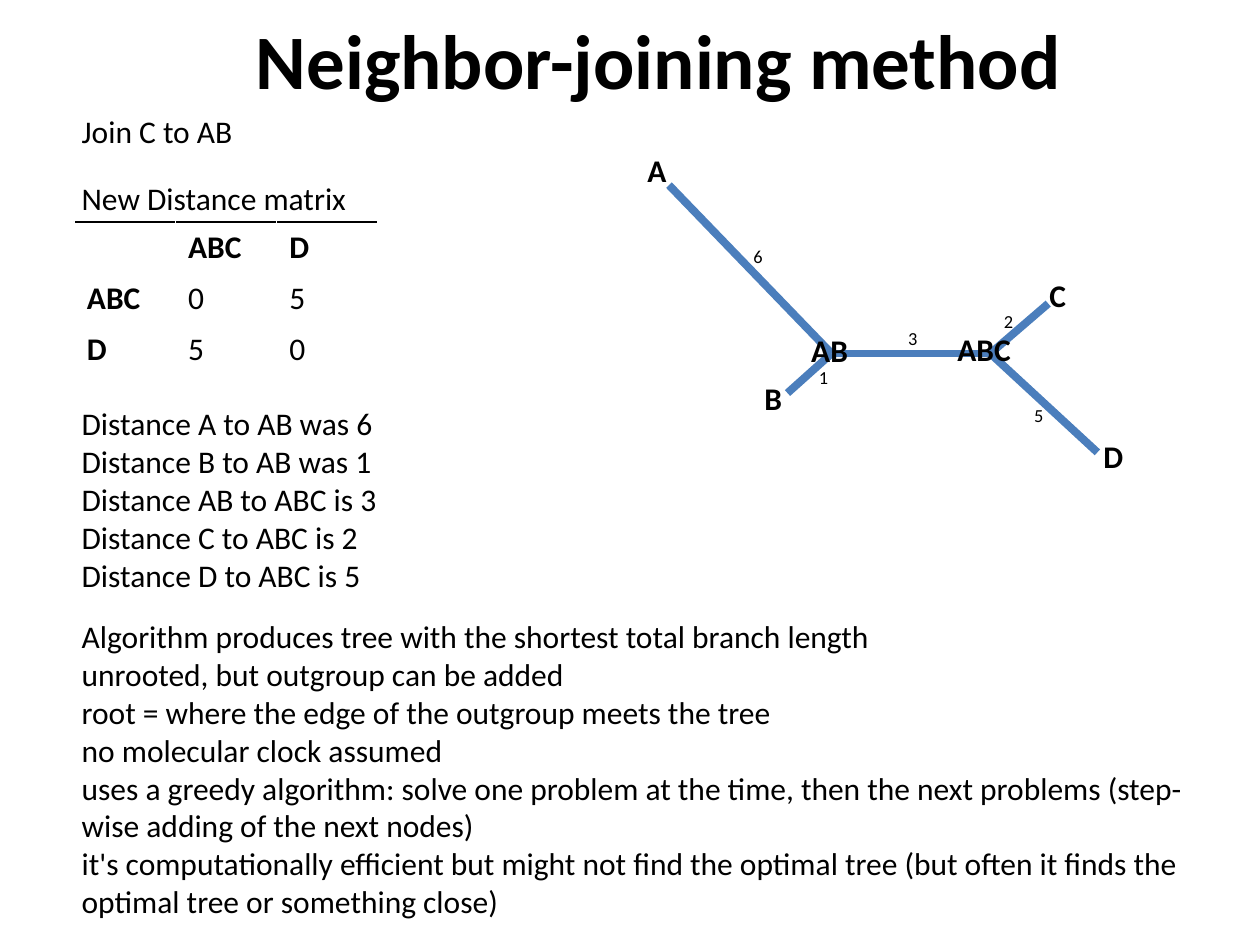
"""Build the neighbor-joining slide with its distance matrix and tree."""
from dataclasses import dataclass

from lxml.etree import SubElement
from pptx import Presentation
from pptx.dml.color import RGBColor
from pptx.enum.shapes import MSO_CONNECTOR as Connector
from pptx.enum.text import MSO_ANCHOR as Anchor, MSO_AUTO_SIZE as AutoSize, PP_ALIGN as Align
from pptx.oxml.ns import qn
from pptx.slide import Slide
from pptx.table import _Cell as Cell
from pptx.text.text import TextFrame
from pptx.util import Pt


@dataclass(frozen=True)
class Theme:
    font: str = "Calibri"
    ink: str = "000000"
    branch: str = "4B7EBC"
    title_size: float = 44
    body_size: float = 18
    length_size: float = 10.5
    branch_width: float = 4.5
    rule_width: float = 1.5


@dataclass(frozen=True)
class Label:
    text: str
    left: float
    top: float
    width: float
    height: float = 29
    size: float = 18
    bold: bool = False
    wrap: bool = False


@dataclass(frozen=True)
class Branch:
    start: str
    end: str
    length: int
    label_left: float
    label_top: float


THEME = Theme()
LEFT = 39.6

NODES = {
    "A": (382.3, 105.8),
    "B": (450, 224.6),
    "C": (599, 173.5),
    "D": (627.1, 258.5),
    "AB": (475.2, 202),
    "ABC": (565.9, 202),
}
BRANCHES = [
    Branch("A", "AB", 6, 423.4, 136.8),
    Branch("AB", "ABC", 3, 511.9, 183.6),
    Branch("ABC", "C", 2, 566.6, 173.5),
    Branch("ABC", "D", 5, 583.9, 227.5),
    Branch("B", "AB", 1, 460.8, 205.9),
]
NODE_LABELS = [
    Label("A", 362.9, 82.8, 25.2, bold=True),
    Label("B", 429.8, 213.1, 24.5, bold=True),
    Label("C", 592.6, 154.1, 24.5, bold=True),
    Label("D", 623.5, 246.2, 25.9, bold=True),
    Label("AB", 456.5, 185.8, 36, bold=True),
    Label("ABC", 540, 185, 45.4, bold=True),
]
DISTANCES = "\n".join([
    "Distance A to AB was 6",
    "Distance B to AB was 1",
    "Distance AB to ABC is 3",
    "Distance C to ABC is 2",
    "Distance D to ABC is 5",
])
REMARKS = "\n".join([
    "Algorithm produces tree with the shortest total branch length",
    "unrooted, but outgroup can be added",
    "root = where the edge of the outgroup meets the tree",
    "no molecular clock assumed",
    "uses a greedy algorithm: solve one problem at the time, then the next problems "
    "(step-wise adding of the next nodes)",
    "it's computationally efficient but might not find the optimal tree "
    "(but often it finds the optimal tree or something close)",
])
BODY_LABELS = [
    Label("Join C to AB", LEFT, 60.5, 101.5),
    Label("New Distance matrix", LEFT, 98.6, 167),
    Label(DISTANCES, LEFT, 227.5, 185, 116.6),
    Label(REMARKS, LEFT, 349.2, 660.2, 181.4, wrap=True),
]
MATRIX = [["", "ABC", "D"], ["ABC", "0", "5"], ["D", "5", "0"]]


def format_text(text_frame: TextFrame, size: float, bold: bool) -> None:
    """Apply the theme font to every run."""
    for paragraph in text_frame.paragraphs:
        paragraph.alignment = Align.LEFT
        for run in paragraph.runs:
            run.font.name = THEME.font
            run.font.size = Pt(size)
            run.font.bold = bold
            run.font.color.rgb = RGBColor.from_string(THEME.ink)


def add_title(slide: Slide, text: str) -> None:
    """Place and format the title placeholder."""
    title = slide.shapes.title
    title.left, title.top, title.width, title.height = Pt(139), Pt(3.6), Pt(480.2), Pt(60.5)
    text_frame = title.text_frame
    text_frame.text = text
    text_frame.word_wrap = False
    text_frame.auto_size = AutoSize.NONE
    text_frame.vertical_anchor = Anchor.TOP
    format_text(text_frame, THEME.title_size, True)


def add_label(slide: Slide, label: Label) -> None:
    """Add one text box."""
    shape = slide.shapes.add_textbox(
        Pt(label.left), Pt(label.top), Pt(label.width), Pt(label.height))
    text_frame = shape.text_frame
    text_frame.text = label.text
    text_frame.word_wrap = label.wrap
    text_frame.auto_size = AutoSize.SHAPE_TO_FIT_TEXT
    format_text(text_frame, label.size, label.bold)


def add_branch(slide: Slide, branch: Branch) -> None:
    """Draw one tree edge between two nodes."""
    points = [Pt(value) for value in NODES[branch.start] + NODES[branch.end]]
    connector = slide.shapes.add_connector(Connector.STRAIGHT, *points)
    connector.line.color.rgb = RGBColor.from_string(THEME.branch)
    connector.line.width = Pt(THEME.branch_width)
    SubElement(connector._element.spPr, qn("a:effectLst"))


def add_top_rule(cell: Cell) -> None:
    """Give a table cell a solid top border."""
    properties = cell._tc.get_or_add_tcPr()
    border = properties.makeelement(qn("a:lnT"), {"w": str(Pt(THEME.rule_width))})
    fill = SubElement(border, qn("a:solidFill"))
    SubElement(fill, qn("a:srgbClr"), val=THEME.ink)
    properties.insert(0, border)


def add_matrix(slide: Slide) -> None:
    """Add the distance matrix with bold row and column headings."""
    size = len(MATRIX)
    table = slide.shapes.add_table(
        size, size, Pt(42.5), Pt(126.7), Pt(173.4), Pt(86.4)).table
    table.first_row = False
    table.horz_banding = False
    for row, values in enumerate(MATRIX):
        for column, value in enumerate(values):
            cell = table.cell(row, column)
            cell.text_frame.text = value
            cell.vertical_anchor = Anchor.MIDDLE
            cell.fill.background()
            format_text(cell.text_frame, THEME.body_size, row == 0 or column == 0)
            if row == 0:
                add_top_rule(cell)


def main() -> None:
    """Assemble and save the slide."""
    presentation = Presentation()
    presentation.slide_width, presentation.slide_height = Pt(720), Pt(540)
    slide = presentation.slides.add_slide(presentation.slide_layouts[5])
    add_title(slide, "Neighbor-joining method")
    add_matrix(slide)
    for branch in BRANCHES:
        add_branch(slide, branch)
    lengths = [
        Label(str(branch.length), branch.label_left, branch.label_top, 20.2, 20.2,
              THEME.length_size)
        for branch in BRANCHES
    ]
    for label in BODY_LABELS + lengths + NODE_LABELS:
        add_label(slide, label)
    presentation.save("out.pptx")


if __name__ == "__main__":
    main()
